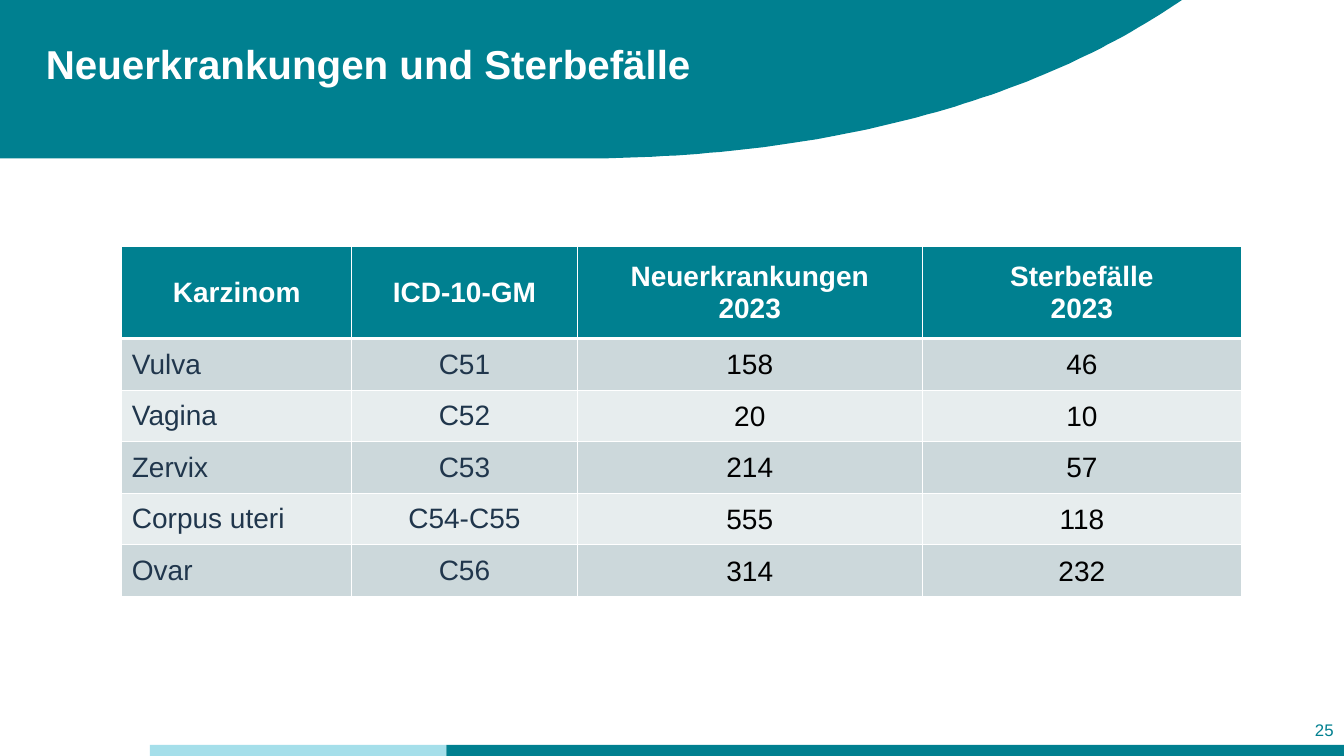
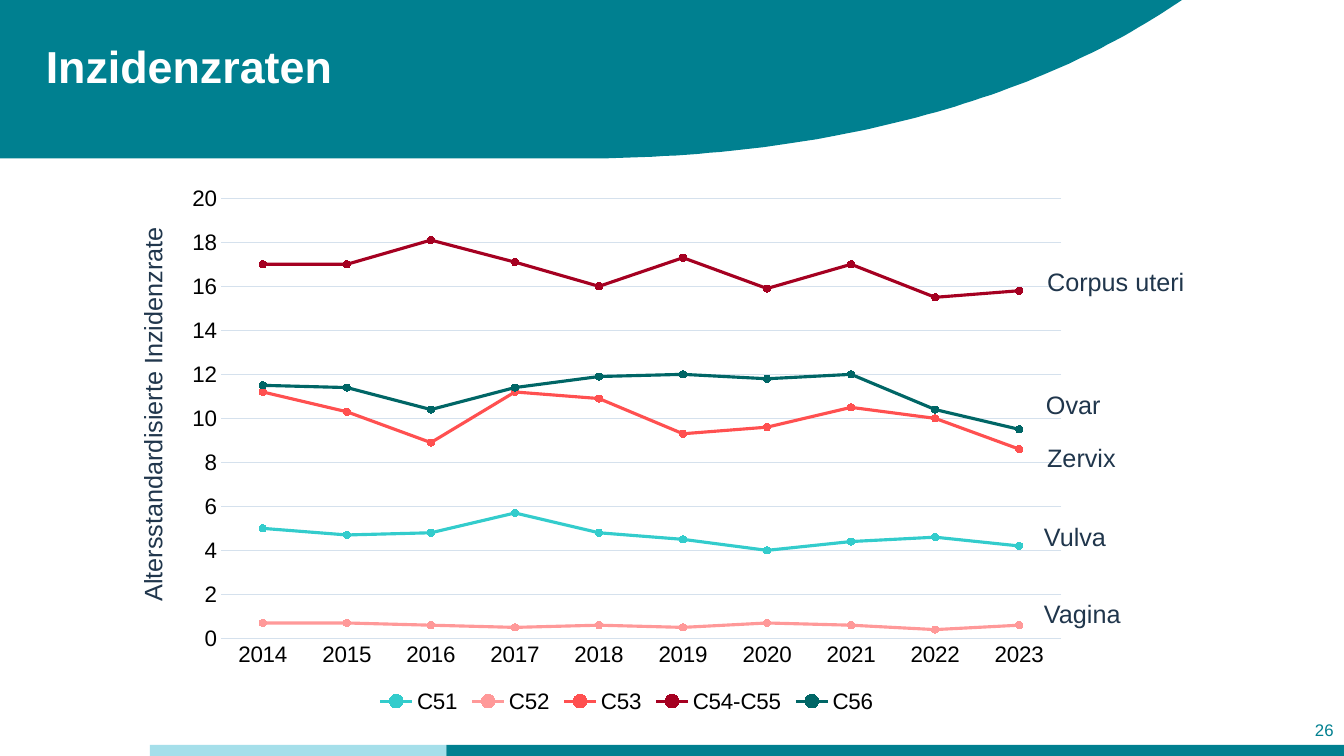
from lxml import etree
from pptx import Presentation
from pptx.chart.data import CategoryChartData
from pptx.dml.color import RGBColor
from pptx.enum.chart import XL_CHART_TYPE, XL_LEGEND_POSITION, XL_MARKER_STYLE, XL_TICK_MARK
from pptx.enum.shapes import MSO_SHAPE
from pptx.enum.text import MSO_ANCHOR, MSO_AUTO_SIZE, PP_ALIGN
from pptx.oxml.ns import qn
from pptx.util import Cm, Pt

# Shared look
FONT = "Arial"
TEAL, LIGHT_TEAL, NAVY = "008090", "A5DFEA", "20364C"
WHITE, BLACK, GRID = "FFFFFF", "000000", "D5E1ED"
STRIPES = ("CCD8DB", "E7EDEE")
SLIDE_WIDTH, SLIDE_HEIGHT = 33.87, 19.05
TITLE_BOX = (0.9, 1, 18.14, 3)
NUMBER_BOX = (31.98, 17.88, 1.88, 1.02)
FOOTER_HEIGHT = 0.28
FOOTER_BANDS = [(3.78, 11.25, LIGHT_TEAL), (11.25, SLIDE_WIDTH, TEAL)]
BAND_RIGHT, BAND_BOTTOM = 29.79, 3.99
BAND_CURVE = [(29.24, 0.36), (25.68, 2.62), (20.62, BAND_BOTTOM), (14.71, BAND_BOTTOM)]
CURVE_STEPS = 60

# Table of cases
CASES_TITLE = ("Neuerkrankungen und Sterbefälle", 28.8, 25)
CASES_HEADER = ("Karzinom", "ICD-10-GM", "Neuerkrankungen\n2023", "Sterbefälle\n2023")
CASES = [
    ("Vulva", "C51", "158", "46"),
    ("Vagina", "C52", "20", "10"),
    ("Zervix", "C53", "214", "57"),
    ("Corpus uteri", "C54-C55", "555", "118"),
    ("Ovar", "C56", "314", "232"),
]
CASES_LEFT, CASES_TOP = 3.07, 6.22
COLUMN_WIDTHS = (5.79, 5.69, 8.69, 8.05)
HEADER_HEIGHT, ROW_HEIGHT = 2.31, 1.3
NUMBER_MARGINS = {"margin_left": Cm(0.03), "margin_right": Cm(0.03),
                  "margin_top": Cm(0.03), "margin_bottom": 0}

# Chart of incidence rates
RATES_TITLE = ("Inzidenzraten", 32, 26)
RATES_BOX = (4.39, 4.42, 22.81, 13.67)
YEARS = [str(year) for year in range(2014, 2024)]
RATES = [
    ("C51", "33CCCC", (5, 4.7, 4.8, 5.7, 4.8, 4.5, 4, 4.4, 4.6, 4.2)),
    ("C52", "FF9999", (0.7, 0.7, 0.6, 0.5, 0.6, 0.5, 0.7, 0.6, 0.4, 0.6)),
    ("C53", "FF5050", (11.2, 10.3, 8.9, 11.2, 10.9, 9.3, 9.6, 10.5, 10, 8.6)),
    ("C54-C55", "A50021", (17, 17, 18.1, 17.1, 16, 17.3, 15.9, 17, 15.5, 15.8)),
    ("C56", "006666", (11.5, 11.4, 10.4, 11.4, 11.9, 12, 11.8, 12, 10.4, 9.5)),
]
RED_POINT = ("C53", "2017", "FF0000")
VALUE_SCALE = {"minimum_scale": 0, "maximum_scale": 20, "major_unit": 2,
               "has_major_gridlines": True}
LABEL_HEIGHT = 1.02
RATE_LABELS = [  # text, left, top, width, rotation
    ("Altersstandardisierte Inzidenzrate", -1.17, 9.88, 10.03, 270),
    ("Corpus uteri", 26.14, 6.58, 4.01, 0),
    ("Ovar", 26.11, 9.68, 1.91, 0),
    ("Zervix", 26.14, 11.02, 2.26, 0),
    ("Vulva", 26.06, 13, 2.08, 0),
    ("Vagina", 26.06, 14.94, 2.46, 0),
]


def rgb(value):
    return RGBColor.from_string(value)


def lengths(values):
    return [Cm(value) for value in values]


def set_all(target, values):
    for name, value in values.items():
        setattr(target, name, value)


def style_font(font, size, color, bold=False):
    set_all(font, {"name": FONT, "size": Pt(size), "bold": bold})
    font.color.rgb = rgb(color)


def style_frame(frame, size, color, bold=False, align=PP_ALIGN.LEFT):
    for paragraph in frame.paragraphs:
        paragraph.alignment = align
        style_font(paragraph.font, size, color, bold)


def style_line(line, color, width):
    line.color.rgb = rgb(color)
    line.width = Pt(width)


def paint(target, color):
    target.fill.solid()
    target.fill.fore_color.rgb = rgb(color)


def curve_points(start, pull_start, pull_end, end):
    for step in range(CURVE_STEPS + 1):
        t = step / CURVE_STEPS
        yield tuple((1 - t) ** 3 * a + 3 * (1 - t) ** 2 * t * b + 3 * (1 - t) * t ** 2 * c + t ** 3 * d
                    for a, b, c, d in zip(start, pull_start, pull_end, end))


def decorate_layout(layout, slide):
    """Draw the title band and footer bands, then hand them to the layout."""
    outline = [(BAND_RIGHT, 0), *curve_points(*BAND_CURVE), (0, BAND_BOTTOM)]
    builder = slide.shapes.build_freeform(0, 0, scale=Cm(0.01))
    builder.add_line_segments([(x * 100, y * 100) for x, y in outline])
    bands = [(builder.convert_to_shape(), TEAL)]
    for left, right, color in FOOTER_BANDS:
        box = (left, SLIDE_HEIGHT - FOOTER_HEIGHT, right - left, FOOTER_HEIGHT)
        bands.append((slide.shapes.add_shape(MSO_SHAPE.RECTANGLE, *lengths(box)), color))
    for band, color in bands:
        band.shadow.inherit = False
        band.line.fill.background()
        paint(band, color)
        layout.shapes.element.append(band.element)


def add_slide(prs, layout, heading, size, number):
    slide = prs.slides.add_slide(layout)
    title = slide.shapes.title
    set_all(title, dict(zip(("left", "top", "width", "height"), lengths(TITLE_BOX))))
    title.text = heading
    set_all(title.text_frame, {"vertical_anchor": MSO_ANCHOR.TOP, "word_wrap": True,
                               "auto_size": MSO_AUTO_SIZE.NONE})
    title.text_frame.paragraphs[0].line_spacing = 0.9
    style_frame(title.text_frame, size, WHITE, True)

    page = slide.shapes.add_textbox(*lengths(NUMBER_BOX)).text_frame
    page.text = str(number)
    set_all(page, {"word_wrap": True, "vertical_anchor": MSO_ANCHOR.MIDDLE})
    style_frame(page, 12, TEAL, align=PP_ALIGN.RIGHT)
    return slide


def add_borders(cell, widths):
    properties = cell._tc.get_or_add_tcPr()
    for side, width in widths.items():
        border = etree.SubElement(properties, qn(f"a:ln{side}"), w=str(Pt(width)))
        fill = etree.SubElement(border, qn("a:solidFill"))
        etree.SubElement(fill, qn("a:srgbClr"), val=WHITE)


def add_cases_table(slide):
    rows = [CASES_HEADER, *CASES]
    box = (CASES_LEFT, CASES_TOP, sum(COLUMN_WIDTHS), HEADER_HEIGHT + ROW_HEIGHT * len(CASES))
    table = slide.shapes.add_table(len(rows), len(CASES_HEADER), *lengths(box)).table
    table.horz_banding = False
    for column, width in zip(table.columns, COLUMN_WIDTHS):
        column.width = Cm(width)
    for r, row in enumerate(rows):
        is_header = r == 0
        table.rows[r].height = Cm(HEADER_HEIGHT if is_header else ROW_HEIGHT)
        for c, text in enumerate(row):
            cell = table.cell(r, c)
            cell.text = text
            cell.vertical_anchor = MSO_ANCHOR.MIDDLE
            is_count = c >= 2 and not is_header
            if is_count:
                set_all(cell, NUMBER_MARGINS)
            add_borders(cell, {"L": 1, "R": 1, "T": 3 if r == 1 else 1, "B": 3 if is_header else 1})
            paint(cell, TEAL if is_header else STRIPES[(r - 1) % 2])
            color = WHITE if is_header else BLACK if is_count else NAVY
            align = PP_ALIGN.CENTER if is_header or c else PP_ALIGN.LEFT
            style_frame(cell.text_frame, 20, color, is_header, align)


def add_rates_chart(slide):
    data = CategoryChartData()
    data.categories = YEARS
    for name, _, values in RATES:
        data.add_series(name, values)
    chart = slide.shapes.add_chart(XL_CHART_TYPE.LINE_MARKERS, *lengths(RATES_BOX), data).chart
    set_all(chart, {"has_title": False, "has_legend": True})
    set_all(chart.legend, {"position": XL_LEGEND_POSITION.BOTTOM, "include_in_layout": False})
    style_font(chart.font, 16, BLACK)
    style_font(chart.legend.font, 16, BLACK)

    # Axes
    years, scale = chart.category_axis, chart.value_axis
    for axis in (years, scale):
        set_all(axis, {"major_tick_mark": XL_TICK_MARK.NONE, "minor_tick_mark": XL_TICK_MARK.NONE})
        style_font(axis.tick_labels.font, 16, BLACK)
    set_all(scale, VALUE_SCALE)
    scale.format.line.fill.background()
    for line in (years.format.line, scale.major_gridlines.format.line):
        style_line(line, GRID, 0.75)

    # Lines and markers
    chart.plots[0].vary_by_categories = False
    for series, (name, color, _) in zip(chart.plots[0].series, RATES):
        series.smooth = False
        marked = [(series, color)]
        if name == RED_POINT[0]:
            marked.append((series.points[YEARS.index(RED_POINT[1])], RED_POINT[2]))
        for part, marker_color in marked:
            style_line(part.format.line, color, 2.25)
            set_all(part.marker, {"style": XL_MARKER_STYLE.CIRCLE, "size": 5})
            paint(part.marker.format, marker_color)
            style_line(part.marker.format.line, marker_color, 0.75)


def add_rate_labels(slide):
    for text, left, top, width, rotation in RATE_LABELS:
        label = slide.shapes.add_textbox(*lengths((left, top, width, LABEL_HEIGHT)))
        label.rotation = rotation
        label.text_frame.text = text
        set_all(label.text_frame, {"word_wrap": False, "auto_size": MSO_AUTO_SIZE.SHAPE_TO_FIT_TEXT})
        style_frame(label.text_frame, 18, NAVY)


def main():
    prs = Presentation()
    set_all(prs, {"slide_width": Cm(SLIDE_WIDTH), "slide_height": Cm(SLIDE_HEIGHT)})
    layout = prs.slide_layouts[5]

    cases = add_slide(prs, layout, *CASES_TITLE)
    decorate_layout(layout, cases)
    add_cases_table(cases)

    rates = add_slide(prs, layout, *RATES_TITLE)
    add_rates_chart(rates)
    add_rate_labels(rates)
    prs.save("out.pptx")


if __name__ == "__main__":
    main()
